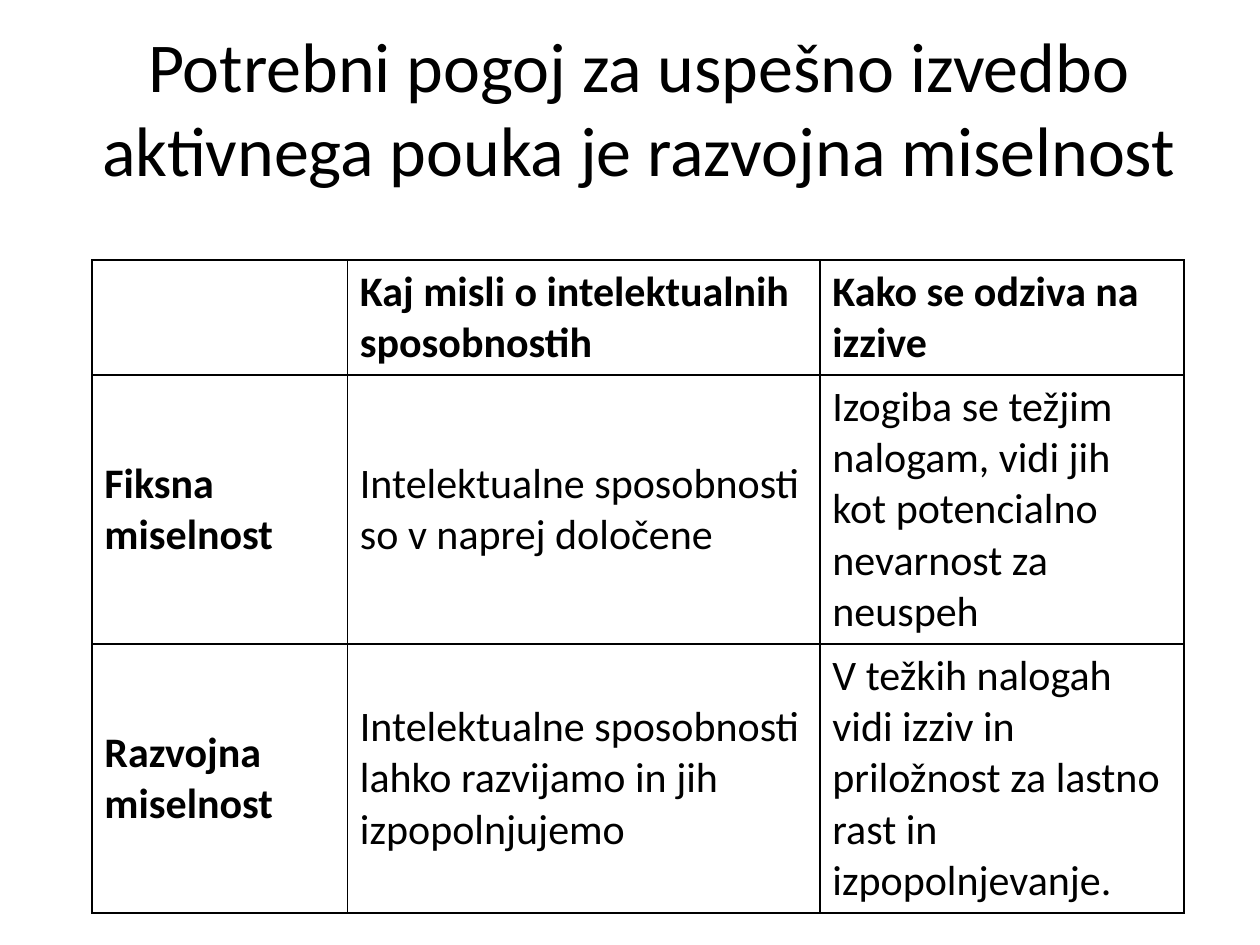
from lxml import etree
from pptx import Presentation
from pptx.dml.color import RGBColor
from pptx.enum.text import MSO_ANCHOR, MSO_AUTO_SIZE, PP_ALIGN
from pptx.oxml.ns import qn
from pptx.util import Pt

TOP, MIDDLE = MSO_ANCHOR.TOP, MSO_ANCHOR.MIDDLE
CENTER = PP_ALIGN.CENTER
GROW = MSO_AUTO_SIZE.SHAPE_TO_FIT_TEXT
ROWS = [
    ["", "Kaj misli o intelektualnih sposobnostih", "Kako se odziva na izzive"],
    ["Fiksna miselnost", "Intelektualne sposobnosti so v naprej določene",
     "Izogiba se težjim nalogam, vidi jih kot potencialno nevarnost za neuspeh"],
    ["Razvojna miselnost",
     "Intelektualne sposobnosti lahko razvijamo in jih izpopolnjujemo",
     "V težkih nalogah vidi izziv in priložnost za lastno rast in izpopolnjevanje."],
]


def color(code):
    return RGBColor.from_string(code)


class Page:
    """Holds the style and the current slide."""

    font, ink = "Calibri", "000000"

    def __init__(self, slide):
        self.slide = slide

    def style(self, frame, size, bold=False):
        for para in frame.paragraphs:
            for run in para.runs:
                run.font.name = self.font
                run.font.size = Pt(size)
                run.font.bold = bold
                run.font.color.rgb = color(self.ink)

    def title(self, text, left, top, width, height):
        box = self.slide.shapes.add_textbox(Pt(left), Pt(top), Pt(width), Pt(height))
        frame = box.text_frame
        frame.word_wrap = True
        frame.auto_size = GROW
        frame.text = text
        frame.paragraphs[0].alignment = CENTER
        self.style(frame, 40)

    def border(self, cell):
        props = cell._tc.get_or_add_tcPr()
        for side in ("lnL", "lnR", "lnT", "lnB"):
            line = etree.SubElement(props, qn(f"a:{side}"), w=str(Pt(1)))
            fill = etree.SubElement(line, qn("a:solidFill"))
            etree.SubElement(fill, qn("a:srgbClr"), val=self.ink)

    def table(self, rows, left, top, widths, heights):
        table = self.slide.shapes.add_table(
            len(rows), len(widths), Pt(left), Pt(top),
            Pt(sum(widths)), Pt(sum(heights))).table
        table.first_row = table.horz_banding = False
        for col, width in zip(table.columns, widths):
            col.width = Pt(width)
        for r, (texts, height) in enumerate(zip(rows, heights)):
            table.rows[r].height = Pt(height)
            for c, text in enumerate(texts):
                cell = table.cell(r, c)
                cell.text = text
                cell.vertical_anchor = MIDDLE if r else TOP
                self.style(cell.text_frame, 24, r == 0 or c == 0)
                self.border(cell)
                cell.fill.background()


def main():
    deck = Presentation()
    deck.slide_width, deck.slide_height = Pt(720), Pt(540)
    page = Page(deck.slides.add_slide(deck.slide_layouts[6]))
    page.table(ROWS, 52.5, 148.5, [146, 270, 208], [65.7, 153.7, 153.7])
    page.title("Potrebni pogoj za uspešno izvedbo aktivnega pouka je razvojna miselnost",
               46, 9.4, 638, 104.4)
    deck.save("out.pptx")


if __name__ == "__main__":
    main()
